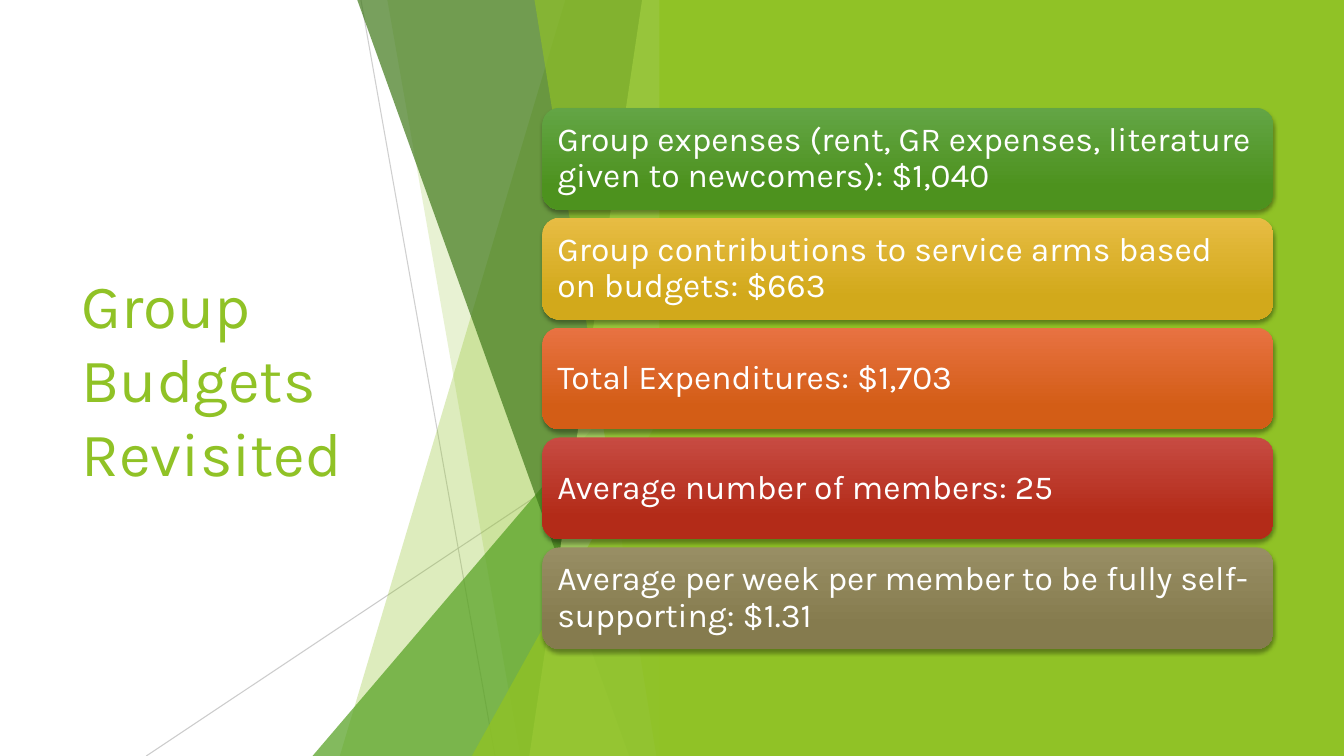
"""Build the slide on revisited group budgets."""
from lxml.etree import SubElement
from pptx import Presentation
from pptx.dml.color import RGBColor
from pptx.enum.shapes import MSO_CONNECTOR, MSO_SHAPE
from pptx.enum.text import MSO_ANCHOR, PP_ALIGN
from pptx.oxml.ns import qn
from pptx.util import Inches, Pt

GREEN = "90C226"


def paint(color, value, shape=None, opacity=100):
    color.rgb = RGBColor.from_string(value)
    if opacity < 100:
        for element in shape.element.spPr.iter(qn("a:srgbClr")):
            SubElement(element, qn("a:alpha"), val=str(opacity * 1000))


def write_text(shape, text, size, color, spacing=1.0, inset=0.1):
    frame = shape.text_frame
    frame.word_wrap = True
    frame.vertical_anchor = MSO_ANCHOR.MIDDLE
    frame.margin_left = frame.margin_right = Inches(inset)
    paragraph = frame.paragraphs[0]
    paragraph.alignment = PP_ALIGN.LEFT
    paragraph.line_spacing = spacing
    run = paragraph.add_run()
    run.text = text
    run.font.name = "Karla"
    run.font.size = Pt(size)
    paint(run.font.color, color)


presentation = Presentation()
presentation.slide_width = Inches(13.33)
presentation.slide_height = Inches(7.5)
slide = presentation.slides.add_slide(presentation.slide_layouts[6])
shapes = slide.shapes

title = shapes.add_textbox(Inches(0.71), Inches(1.51), Inches(3.88), Inches(4.48))
write_text(title, "Group Budgets Revisited", size=44, color=GREEN)

for start_x, start_y, end_x, opacity in [(3.58, 0, 4.91, 75), (6.66, 4.03, 1.45, 80)]:
    ray = shapes.add_connector(
        MSO_CONNECTOR.STRAIGHT, Inches(start_x), Inches(start_y), Inches(end_x), Inches(7.5)
    )
    ray.line.width = Pt(0.75)
    ray.line.fill.solid()
    paint(ray.line.fill.fore_color, "BFBFBF", ray, opacity)
    SubElement(ray.element.spPr, qn("a:effectLst"))

right, bottom = 6.66, 7.5
facets = [
    (5.61, -0.01, 3.37, GREEN, 30),
    (3.84, -0.01, 5.16, GREEN, 20),
    (right, 3.33, 3.1, "54A021", 72),
    (3.54, -0.01, 6.24, "3F7819", 70),
    (6.37, -0.01, 5.25, "C0E474", 70),
    (5.3, -0.01, 6.51, GREEN, 65),
    (right, 3.93, 4.68, GREEN, 80),
]
for top_left, top, bottom_left, color, opacity in facets:
    if top_left == right:
        facet = shapes.add_shape(
            MSO_SHAPE.ISOSCELES_TRIANGLE,
            Inches(bottom_left), Inches(top), Inches(right - bottom_left), Inches(bottom - top),
        )
        facet.adjustments[0] = 1
    else:
        builder = shapes.build_freeform(Inches(top_left), Inches(top))
        corners = [(right, top), (right, bottom), (bottom_left, bottom)]
        builder.add_line_segments([(Inches(x), Inches(y)) for x, y in corners])
        facet = builder.convert_to_shape()
    facet.shadow.inherit = False
    facet.line.fill.background()
    facet.fill.solid()
    paint(facet.fill.fore_color, color, facet, opacity)

panel = shapes.add_shape(MSO_SHAPE.RECTANGLE, Inches(6.54), 0, Inches(6.79), Inches(7.5))
panel.shadow.inherit = False
panel.line.fill.background()
panel.fill.solid()
paint(panel.fill.fore_color, GREEN)

budget_items = [
    ("Group expenses (rent, GR expenses, literature given to newcomers): $1,040", "63A545", "4D921E"),
    ("Group contributions to service arms based on budgets: $663", "E7BC43", "D2A91B"),
    ("Total Expenditures: $1,703", "E87242", "D35D16"),
    ("Average number of members: 25", "C74B42", "B32B18"),
    ("Average per week per member to be fully self-supporting: $1.31", "988E64", "857B4E"),
]
for index, (text, light, dark) in enumerate(budget_items):
    bar = shapes.add_shape(
        MSO_SHAPE.ROUNDED_RECTANGLE,
        Inches(5.38), Inches(1.07 + 1.09 * index), Inches(7.25), Inches(1.01),
    )
    bar.line.fill.background()
    bar.fill.gradient()
    bar.fill.gradient_angle = 270
    for stop, position, color in zip(bar.fill.gradient_stops, (0, 0.78), (light, dark)):
        stop.position = position
        paint(stop.color, color)
    bar.shadow.inherit = False
    shadow = SubElement(
        bar.element.spPr.find(qn("a:effectLst")), qn("a:outerShdw"),
        blurRad=str(Pt(3)), dist=str(Pt(2)), dir="5400000", rotWithShape="0",
    )
    shade = SubElement(shadow, qn("a:srgbClr"), val="000000")
    SubElement(shade, qn("a:alpha"), val="35000")
    write_text(bar, text, size=24, color="FFFFFF", spacing=0.9)

presentation.save("out.pptx")
